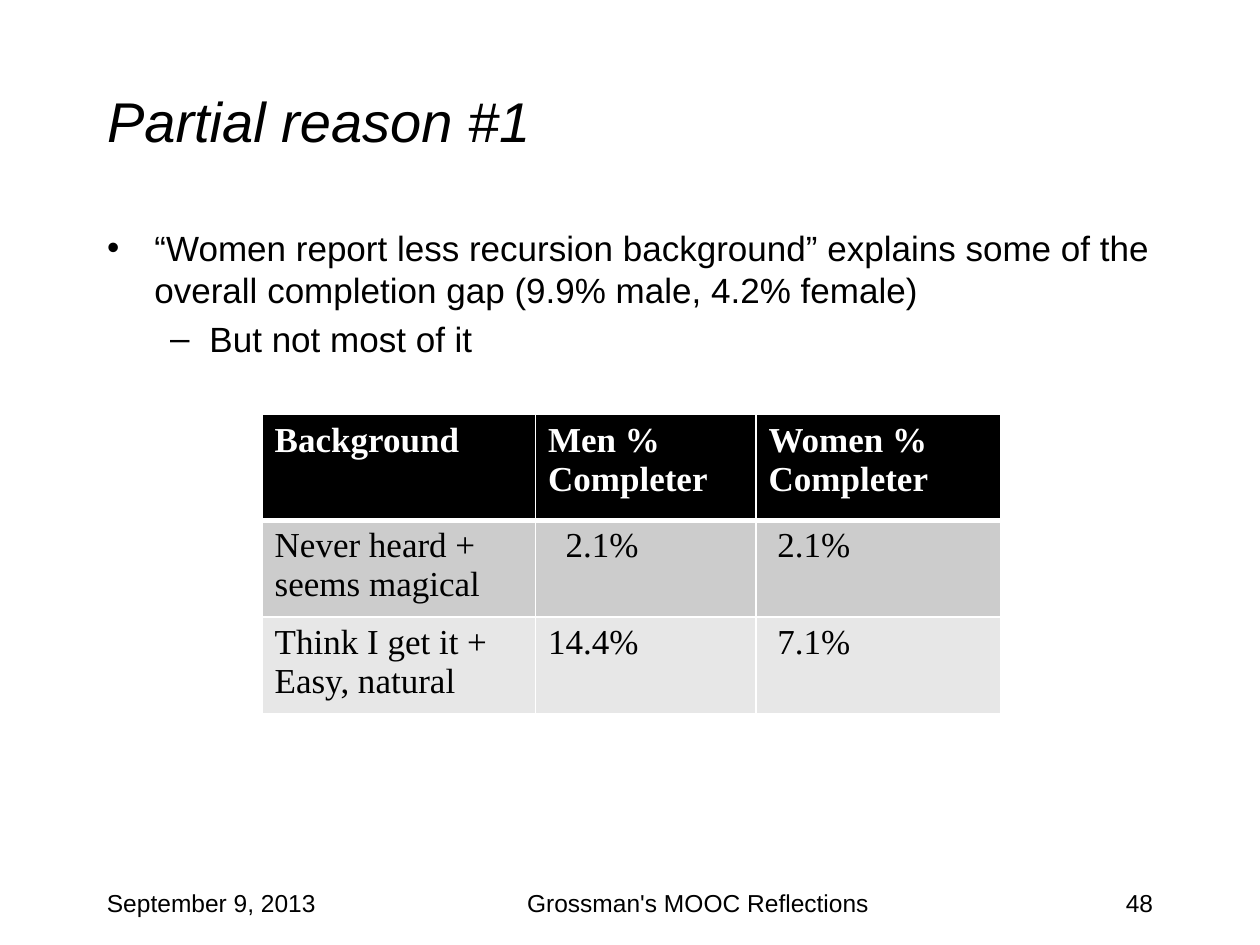
import pptx
import pptx.dml.color
import pptx.enum.text
import pptx.oxml
import pptx.oxml.ns
import pptx.util

Inches = pptx.util.Inches
ALIGN = pptx.enum.text.PP_ALIGN
ANCHOR = pptx.enum.text.MSO_ANCHOR
BLACK, WHITE = "000000", "FFFFFF"
SANS, SERIF = "Arial", "Times New Roman"

MARGIN, CONTENT_WIDTH = 0.75, 8.5
ROWS = [
    ["Background", "Men %\nCompleter", "Women %\nCompleter"],
    ["Never heard + seems magical", "2.1%", "2.1%"],
    ["Think I get it +\nEasy, natural", "14.4%", "7.1%"],
]
ROW_FILLS = [BLACK, "CCCCCC", "E7E7E7"]
ROW_HEIGHTS = [0.84, 0.65, 0.65]
COLUMN_WIDTHS = [2.17, 1.75, 1.94]
# Extra left indent that lines the shorter percentages up
VALUE_INDENTS = {(1, 1): 0.14, (1, 2): 0.07, (2, 2): 0.07}


def rgb(color):
    return pptx.dml.color.RGBColor.from_string(color)


def place(shape, box):
    shape.left, shape.top, shape.width, shape.height = map(Inches, box)


def add_span(para, text, size, font=SANS, color=BLACK, bold=False, italic=False):
    span = para.add_run()
    span.text = text
    span.font.name, span.font.size = font, pptx.util.Pt(size)
    span.font.bold, span.font.italic = bold, italic
    span.font.color.rgb = rgb(color)


def fill_paragraphs(frame, items, size, **style):
    """Write (text, level) items, one paragraph each."""
    for index, (text, level) in enumerate(items):
        para = frame.add_paragraph() if index else frame.paragraphs[0]
        para.level = level
        add_span(para, text, size, **style)


def add_title(page, box):
    title = page.shapes.title
    place(title, box)
    frame = title.text_frame
    frame.auto_size = pptx.enum.text.MSO_AUTO_SIZE.NONE
    frame.vertical_anchor = ANCHOR.MIDDLE
    fill_paragraphs(frame, [("Partial reason #1", 0)], 32, italic=True)
    frame.paragraphs[0].alignment = ALIGN.LEFT


def add_points(page, box):
    body = page.placeholders[1]
    place(body, box)
    body.text_frame.auto_size = pptx.enum.text.MSO_AUTO_SIZE.NONE
    points = [
        ("“Women report less recursion background” explains some of the "
         "overall completion gap (9.9% male, 4.2% female)", 0),
        ("But not most of it", 1),
    ]
    fill_paragraphs(body.text_frame, points, 20)


def set_borders(cell, bottom_width):
    """Draw white cell borders, 1 pt except at the bottom."""
    properties = cell._tc.get_or_add_tcPr()
    widths = {"lnL": 1, "lnR": 1, "lnT": 1, "lnB": bottom_width}
    for index, (side, width) in enumerate(widths.items()):
        line = pptx.oxml.parse_xml(
            f'<a:{side} {pptx.oxml.ns.nsdecls("a")} w="{pptx.util.Pt(width)}">'
            f'<a:solidFill><a:srgbClr val="{WHITE}"/></a:solidFill></a:{side}>')
        properties.insert(index, line)


def add_completion_table(page, box):
    table = page.shapes.add_table(
        len(ROWS), len(COLUMN_WIDTHS), *map(Inches, box)).table
    for column, width in zip(table.columns, COLUMN_WIDTHS):
        column.width = Inches(width)
    for row, height in zip(table.rows, ROW_HEIGHTS):
        row.height = Inches(height)
    for r, texts in enumerate(ROWS):
        header = r == 0
        for c, text in enumerate(texts):
            cell = table.cell(r, c)
            cell.fill.solid()
            cell.fill.fore_color.rgb = rgb(ROW_FILLS[r])
            cell.margin_left = Inches(0.1 + VALUE_INDENTS.get((r, c), 0))
            lines = [(line, 0) for line in text.split("\n")]
            fill_paragraphs(cell.text_frame, lines, 20, font=SERIF, bold=header,
                            color=WHITE if header else BLACK)
            set_borders(cell, 3 if header else 1)
    # The first body row shares the header's thick rule
    for cell in table.rows[1].cells:
        top = cell._tc.tcPr.find(pptx.oxml.ns.qn("a:lnT"))
        top.set("w", str(pptx.util.Pt(3)))


def add_footer(page, box):
    left, top, width, height = box
    side_width = 2.08
    parts = [
        ("September 9, 2013", left, side_width, ALIGN.LEFT),
        ("Grossman's MOOC Reflections", left + 2, 5.58, ALIGN.CENTER),
        ("48", left + width - side_width, side_width, ALIGN.RIGHT),
    ]
    for text, part_left, part_width, alignment in parts:
        part = page.shapes.add_textbox(
            *map(Inches, (part_left, top, part_width, height)))
        part.text_frame.word_wrap = True
        fill_paragraphs(part.text_frame, [(text, 0)], 14)
        part.text_frame.paragraphs[0].alignment = alignment


def main():
    deck = pptx.Presentation()
    deck.slide_width, deck.slide_height = Inches(10), Inches(7.5)
    page = deck.slides.add_slide(deck.slide_layouts[1])
    add_title(page, (MARGIN, 0.33, CONTENT_WIDTH, 1.25))
    add_points(page, (MARGIN, 1.75, CONTENT_WIDTH, 4.92))
    add_footer(page, (MARGIN, 7, CONTENT_WIDTH, 0.5))
    add_completion_table(
        page, (2.08, 3.29, sum(COLUMN_WIDTHS), sum(ROW_HEIGHTS)))
    deck.save("out.pptx")


if __name__ == "__main__":
    main()
